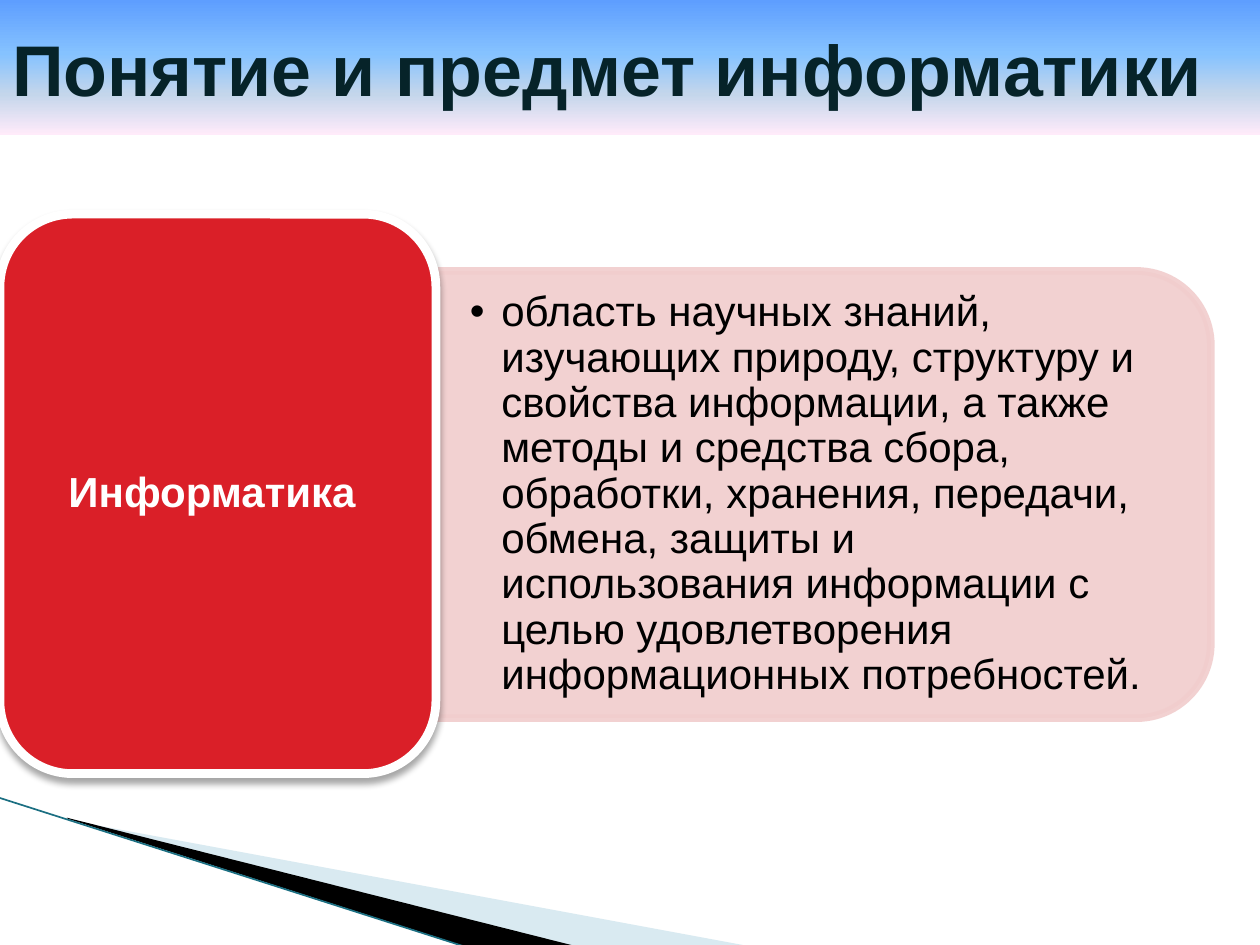
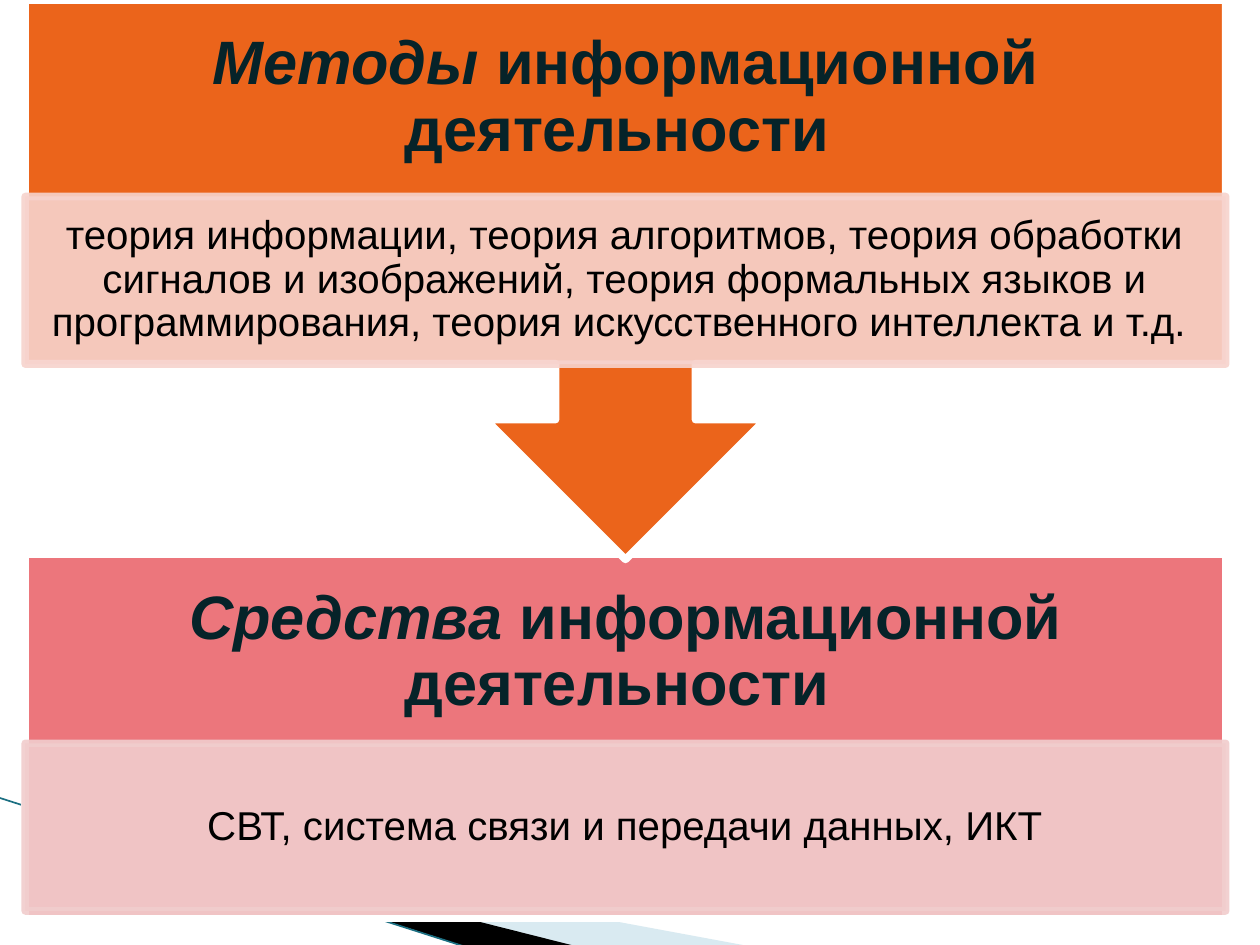
"""Build two slides on informatics: its definition, then its methods and means."""
from lxml import etree
from pptx import Presentation
from pptx.dml.color import RGBColor
from pptx.enum import shapes, text
from pptx.oxml import ns
from pptx.util import Pt

FONT = "Arial"
WHITE = RGBColor(0xFF, 0xFF, 0xFF)
BLACK = RGBColor(0x00, 0x00, 0x00)
INK = RGBColor(0x06, 0x23, 0x29)
RED = RGBColor(0xDA, 0x1F, 0x28)
ORANGE = RGBColor(0xEB, 0x64, 0x1B)
PINK = RGBColor(0xEC, 0x76, 0x7C)
PALE_PINK = RGBColor(0xF1, 0xCD, 0xCD)
PALE_ORANGE = RGBColor(0xF7, 0xD3, 0xCD)
PALE_BLUE = RGBColor(0xA0, 0xCB, 0xDC)
TEAL = RGBColor(0x1B, 0x6F, 0x82)
TITLE_STOPS = ((0, RGBColor(0x5E, 0x9E, 0xFF)), (40, RGBColor(0x85, 0xC2, 0xFF)),
               (70, RGBColor(0xC4, 0xD6, 0xEB)), (100, RGBColor(0xFF, 0xEB, 0xFA)))

BORDER = 4.33
PANEL_LEFT, PANEL_WIDTH = 14.4, 686
HEADING_HEIGHT, DETAIL_HEIGHT = 112.3, 95.8


def add_xml(parent, tag, **attrs):
    """Append a drawing element with the given attributes."""
    return etree.SubElement(parent, ns.qn(tag), {k: str(v) for k, v in attrs.items()})


def set_alpha(sp, percent):
    """Make every solid colour of a shape partly transparent."""
    for colour in sp._element.spPr.iter(ns.qn("a:srgbClr")):
        add_xml(colour, "a:alpha", val=percent * 1000)


def add_box(slide, kind, box, fill, line=None, width=BORDER, alpha=None, rotation=0):
    """Add a preset shape with a flat fill and an optional border."""
    sp = slide.shapes.add_shape(kind, *map(Pt, box))
    sp.shadow.inherit = False
    sp.rotation = rotation
    sp.fill.solid()
    sp.fill.fore_color.rgb = fill
    if line is None:
        sp.line.fill.background()
    else:
        sp.line.color.rgb = line
        sp.line.width = Pt(width)
    if alpha:
        set_alpha(sp, alpha)
    return sp


def write(tf, content, size, color, bold=False, italic_lead="", align=text.PP_ALIGN.CENTER,
          insets=(7.2, 3.6), spacing=0.9, bullet=False):
    """Write one paragraph, with an optional italic lead, in a text frame."""
    tf.word_wrap = True
    tf.vertical_anchor = text.MSO_ANCHOR.MIDDLE
    tf.margin_left = tf.margin_right = Pt(insets[0])
    tf.margin_top = tf.margin_bottom = Pt(insets[1])
    p = tf.paragraphs[0]
    p.alignment = align
    p.line_spacing = spacing
    if bullet:
        pPr = p._p.get_or_add_pPr()
        pPr.set("marL", str(Pt(18)))
        pPr.set("indent", str(-Pt(18)))
        add_xml(pPr, "a:buFont", typeface=FONT)
        add_xml(pPr, "a:buChar", char="•")
    for part, italic in ((italic_lead, True), (content, False)):
        if part:
            r = p.add_run()
            r.text = part
            r.font.name, r.font.size = FONT, Pt(size)
            r.font.bold, r.font.italic = bold, italic
            r.font.color.rgb = color


def add_text(slide, box, content, **fmt):
    """Add a text box holding one formatted paragraph."""
    write(slide.shapes.add_textbox(*map(Pt, box)).text_frame, content, **fmt)


def add_wedge(slide, points, fill, alpha=None):
    """Add a closed outline through the given points."""
    start, *rest = [tuple(map(Pt, point)) for point in points]
    builder = slide.shapes.build_freeform(*start)
    builder.add_line_segments(rest, close=True)
    sp = builder.convert_to_shape()
    sp.shadow.inherit = False
    sp.fill.solid()
    sp.fill.fore_color.rgb = fill
    sp.line.fill.background()
    if alpha:
        set_alpha(sp, alpha)


def add_slide(prs):
    """Add a blank slide with the corner wedges."""
    slide = prs.slides.add_slide(prs.slide_layouts[6])
    add_wedge(slide, [(39.6, 468.7), (428.4, 540.7), (328.3, 540.7), (39.6, 468)], PALE_BLUE, 40)
    add_wedge(slide, [(38.2, 467.3), (329, 540.7), (267.8, 541.4), (38.9, 468)], BLACK)
    edge = slide.shapes.add_connector(shapes.MSO_CONNECTOR.STRAIGHT,
                                      *map(Pt, (-0.7, 455.8, 267.1, 541.4)))
    edge.line.color.rgb = TEAL
    edge.line.width = Pt(0.95)
    add_xml(edge._element.spPr, "a:effectLst")
    return slide


def add_title(slide, content):
    """Add the gradient title band."""
    sp = add_box(slide, shapes.MSO_SHAPE.RECTANGLE, (0, 0, 720, 77), WHITE)
    sp.fill.gradient()
    sp.fill.gradient_angle = 270
    stops = sp._element.spPr.find(".//" + ns.qn("a:gsLst"))
    for old in list(stops):
        stops.remove(old)
    for position, colour in TITLE_STOPS:
        add_xml(add_xml(stops, "a:gs", pos=position * 1000), "a:srgbClr", val=colour)
    write(sp.text_frame, content, size=41, color=INK, bold=True,
          align=text.PP_ALIGN.LEFT, spacing=1.0)


def add_term(slide, term, definition):
    """Add a term card with its definition panel to the right."""
    add_box(slide, shapes.MSO_SHAPE.ROUND_2_SAME_RECTANGLE, (342.7, 61.2, 255.6, 442.8),
            PALE_PINK, PALE_PINK, alpha=90, rotation=90)
    add_text(slide, (249.1, 167, 430.6, 231.1), definition, size=24, color=BLACK,
             align=text.PP_ALIGN.LEFT, insets=(19.4, 10.1), bullet=True)
    card = add_box(slide, shapes.MSO_SHAPE.ROUNDED_RECTANGLE, (0, 122.4, 249.1, 319.7),
                   RED, WHITE, width=5)
    effects = card._element.spPr.find(ns.qn("a:effectLst"))
    shadow = add_xml(effects, "a:outerShdw", blurRad=Pt(4), dist=Pt(3), dir=90 * 60000,
                     rotWithShape=0)
    add_xml(add_xml(shadow, "a:srgbClr", val=BLACK), "a:alpha", val=35000)
    add_text(slide, (12.2, 134.6, 224.6, 295.2), term, size=24, color=WHITE, bold=True)


def add_stage(slide, kind, top, height, fill, tint, lead, detail, detail_top, rotation=0):
    """Add a process stage: a coloured panel, its heading and a tinted detail strip."""
    add_box(slide, kind, (PANEL_LEFT, top, PANEL_WIDTH, height), fill, WHITE, rotation=rotation)
    add_text(slide, (PANEL_LEFT, top, PANEL_WIDTH, HEADING_HEIGHT),
             " информационной деятельности ", italic_lead=lead,
             size=35, color=INK, bold=True, insets=(19.4, 19.4))
    strip = (PANEL_LEFT, detail_top, PANEL_WIDTH, DETAIL_HEIGHT)
    add_box(slide, shapes.MSO_SHAPE.RECTANGLE, strip, tint, tint, alpha=90)
    add_text(slide, strip, detail, size=23, color=BLACK, insets=(13, 2.2))


def main():
    """Build and save the presentation."""
    prs = Presentation()
    prs.slide_width, prs.slide_height = Pt(720), Pt(540)

    s = add_slide(prs)
    add_term(s, "Информатика ",
             "область научных знаний, изучающих природу, структуру и свойства информации, "
             "а также методы и средства сбора, обработки, хранения, передачи, обмена, защиты "
             "и использования информации с целью удовлетворения информационных потребностей.")
    add_title(s, "Понятие и предмет информатики")

    s = add_slide(prs)
    add_stage(s, shapes.MSO_SHAPE.RECTANGLE, 316.8, 208.1, PINK, PALE_PINK, "Средства",
              "СВТ, система связи и передачи данных, ИКТ", 424.8)
    add_stage(s, shapes.MSO_SHAPE.UP_ARROW_CALLOUT, 0, 319.7, ORANGE, PALE_ORANGE, "Методы",
              "теория информации, теория алгоритмов, теория обработки сигналов и изображений, "
              "теория формальных языков и программирования, теория искусственного интеллекта "
              "и т.д. ", HEADING_HEIGHT, rotation=180)

    prs.save("out.pptx")


if __name__ == "__main__":
    main()
